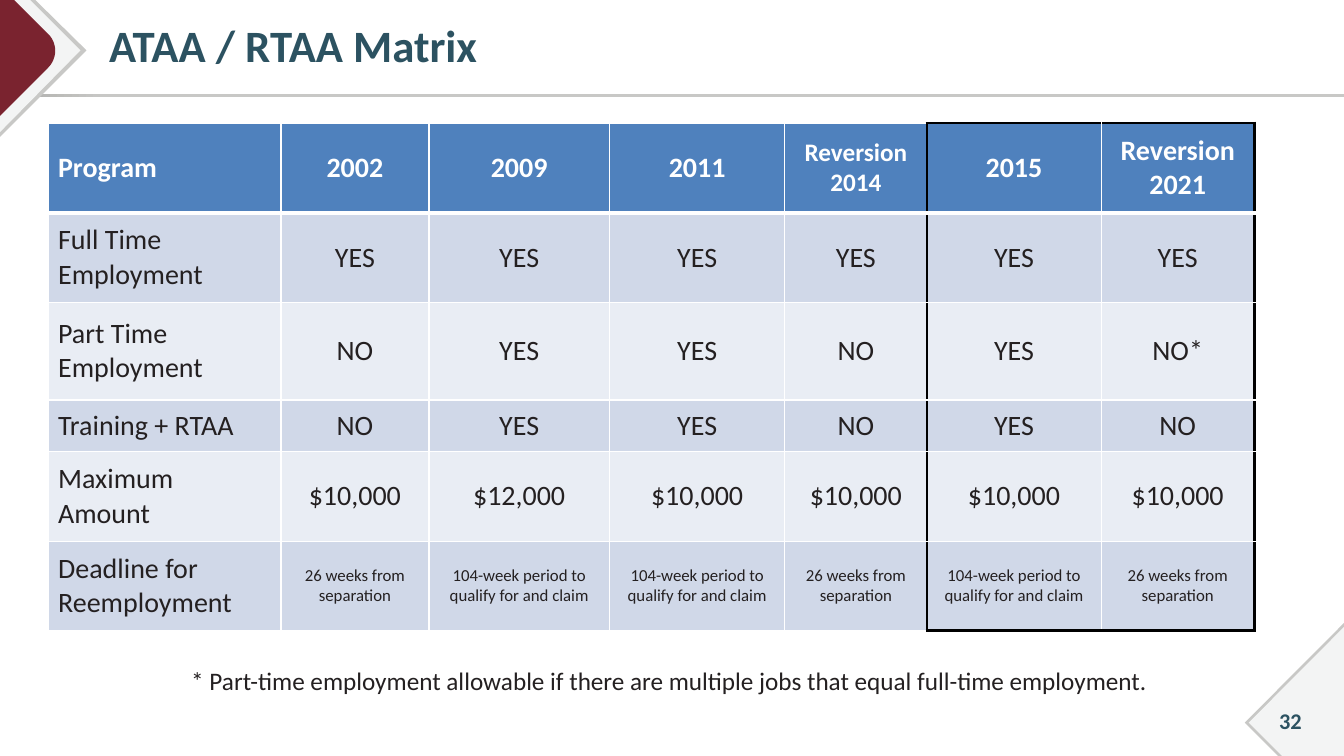
from lxml.etree import SubElement
from pptx import Presentation
from pptx.dml.color import RGBColor
from pptx.enum.shapes import MSO_SHAPE
from pptx.enum.text import MSO_ANCHOR, PP_ALIGN
from pptx.oxml.ns import qn
from pptx.util import Cm, Pt

COLORS = {
    "teal": "2C5261", "ink": "242021", "white": "FFFFFF", "black": "000000",
    "maroon": "7A232F", "gray": "C8C8C6", "dark_gray": "ABABA8", "pale": "F3F4F4",
    "header": "4F81BD", "odd": "D0D8E8", "even": "E9EDF4",
}

COLUMN_WIDTHS = [5.87, 3.73, 4.55, 4.42, 3.58, 4.39, 3.86]
ROW_HEIGHTS = [2.26, 2.26, 2.46, 1.3, 2.26, 2.26]
SHORT_DEADLINE = "26 weeks from separation"
LONG_DEADLINE = "104-week period to qualify for and claim"
MATRIX = [
    ["Program", "2002", "2009", "2011", "Reversion 2014", "2015", "Reversion 2021"],
    ["Full Time Employment"] + ["YES"] * 6,
    ["Part Time Employment", "NO", "YES", "YES", "NO", "YES", "NO*"],
    ["Training + RTAA", "NO", "YES", "YES", "NO", "YES", "NO"],
    ["Maximum Amount", "$10,000", "$12,000"] + ["$10,000"] * 4,
    ["Deadline for Reemployment", SHORT_DEADLINE, LONG_DEADLINE, LONG_DEADLINE,
     SHORT_DEADLINE, LONG_DEADLINE, SHORT_DEADLINE],
]
LAST_ROW = len(MATRIX) - 1
LAST_COLUMN = len(MATRIX[0]) - 1
FRAME_COLUMN = 5


def color(name):
    return RGBColor.from_string(COLORS[name])


def write_text(frame, text, size=20, ink="ink", bold=False, align=PP_ALIGN.LEFT, spacing=None):
    frame.word_wrap = True
    para = frame.paragraphs[0]
    para.alignment = align
    if spacing:
        para.line_spacing = spacing
    span = para.add_run()
    span.text = text
    span.font.name = "Calibri"
    span.font.size = Pt(size)
    span.font.bold = bold
    span.font.color.rgb = color(ink)


def bezier(start, first, second, end, steps=12):
    points = []
    for step in range(steps + 1):
        t = step / steps
        weights = [(1 - t) ** 3, 3 * t * (1 - t) ** 2, 3 * t ** 2 * (1 - t), t ** 3]
        points.append(tuple(
            sum(weight * value for weight, value in zip(weights, axis))
            for axis in zip(start, first, second, end)))
    return points


def cell_edges(row, column):
    thin, thick, outline = ("white", 1), ("white", 3), ("black", 2.25)
    framed = column >= FRAME_COLUMN
    return {
        "lnL": outline if column == FRAME_COLUMN else thin,
        "lnR": outline if column in (FRAME_COLUMN - 1, LAST_COLUMN) else thin,
        "lnT": outline if framed and row == 0 else thick if row == 1 else thin,
        "lnB": outline if framed and row == LAST_ROW else thick if row == 0 else thin,
    }


class MatrixSlide:
    def __init__(self, deck):
        self.page = deck.slides.add_slide(deck.slide_layouts[6])

    def rule(self, left, top, width, height):
        bar = self.page.shapes.add_shape(
            MSO_SHAPE.RECTANGLE, Cm(left), Cm(top), Cm(width), Cm(height))
        bar.shadow.inherit = False
        bar.line.fill.background()
        bar.fill.gradient()
        bar.fill.gradient_angle = 0
        for stop, name, position in zip(
                bar.fill.gradient_stops, ("dark_gray", "gray"), (0, 0.08)):
            stop.color.rgb = color(name)
            stop.position = position

    def polygon(self, points, fill):
        corners = [(Cm(x), Cm(y)) for x, y in points]
        builder = self.page.shapes.build_freeform(*corners[0])
        builder.add_line_segments(corners[1:], close=True)
        outline = builder.convert_to_shape()
        outline.shadow.inherit = False
        outline.line.fill.background()
        outline.fill.solid()
        outline.fill.fore_color.rgb = color(fill)

    def text(self, left, top, width, height, text, inset=0.25, anchor=MSO_ANCHOR.MIDDLE, **style):
        box = self.page.shapes.add_textbox(Cm(left), Cm(top), Cm(width), Cm(height))
        box.text_frame.margin_left = Cm(inset)
        box.text_frame.vertical_anchor = anchor
        write_text(box.text_frame, text, **style)

    def borders(self, cell, edges):
        properties = cell._tc.get_or_add_tcPr()
        for index, (tag, (name, width)) in enumerate(edges.items()):
            line = SubElement(properties, qn(f"a:{tag}"), w=str(Pt(width)))
            fill = SubElement(line, qn("a:solidFill"))
            SubElement(fill, qn("a:srgbClr"), val=COLORS[name])
            properties.insert(index, line)

    def table(self, left, top):
        table = self.page.shapes.add_table(
            len(MATRIX), len(MATRIX[0]), Cm(left), Cm(top),
            Cm(sum(COLUMN_WIDTHS)), Cm(sum(ROW_HEIGHTS))).table
        for column, width in zip(table.columns, COLUMN_WIDTHS):
            column.width = Cm(width)
        for row, height in zip(table.rows, ROW_HEIGHTS):
            row.height = Cm(height)
        for r, values in enumerate(MATRIX):
            for c, value in enumerate(values):
                cell = table.cell(r, c)
                cell.vertical_anchor = MSO_ANCHOR.MIDDLE
                cell.fill.solid()
                cell.fill.fore_color.rgb = color(
                    "header" if r == 0 else "odd" if r % 2 else "even")
                size = 18 if value == "Reversion 2014" else 12 if r == LAST_ROW and c else 20
                write_text(cell.text_frame, value, size=size, bold=r == 0,
                           ink="ink" if r else "white",
                           align=PP_ALIGN.CENTER if c else PP_ALIGN.LEFT)
                self.borders(cell, cell_edges(r, c))


def main():
    deck = Presentation()
    deck.slide_width, deck.slide_height = Cm(33.87), Cm(19.05)
    slide = MatrixSlide(deck)

    slide.rule(0, 2.36, 33.87, 0.08)
    slide.polygon([(0, 0), (0.89, 0), (2.18, 1.27), (0, 3.45)], "gray")
    slide.polygon([(0, 0), (0.76, 0), (2.03, 1.27), (0, 3.33)], "pale")
    rounded_tip = bezier((1.22, 0.86), (1.45, 1.09), (1.45, 1.47), (1.22, 1.7))
    slide.polygon([(0, 0), (0.36, 0), *rounded_tip, (0, 2.92)], "maroon")
    slide.polygon([(33.87, 15.7), (33.87, 19.05), (32.21, 19.05), (31.37, 18.21)], "gray")
    slide.polygon([(33.87, 15.8), (33.87, 19.05), (32.31, 19.05), (31.47, 18.21)], "pale")

    slide.text(2.24, 0.13, 30.78, 2.18, "ATAA / RTAA Matrix", inset=0.51,
               size=32, ink="teal", bold=True, spacing=0.9)
    slide.text(31.62, 17.65, 1.8, 1.02, "32", size=16, ink="teal", bold=True,
               align=PP_ALIGN.CENTER)
    slide.text(4.57, 16.64, 25.07, 1.02,
               "* Part-time employment allowable if there are multiple jobs "
               "that equal full-time employment.", anchor=MSO_ANCHOR.TOP, size=18)
    slide.table(1.21, 3.1)
    deck.save("out.pptx")


if __name__ == "__main__":
    main()
